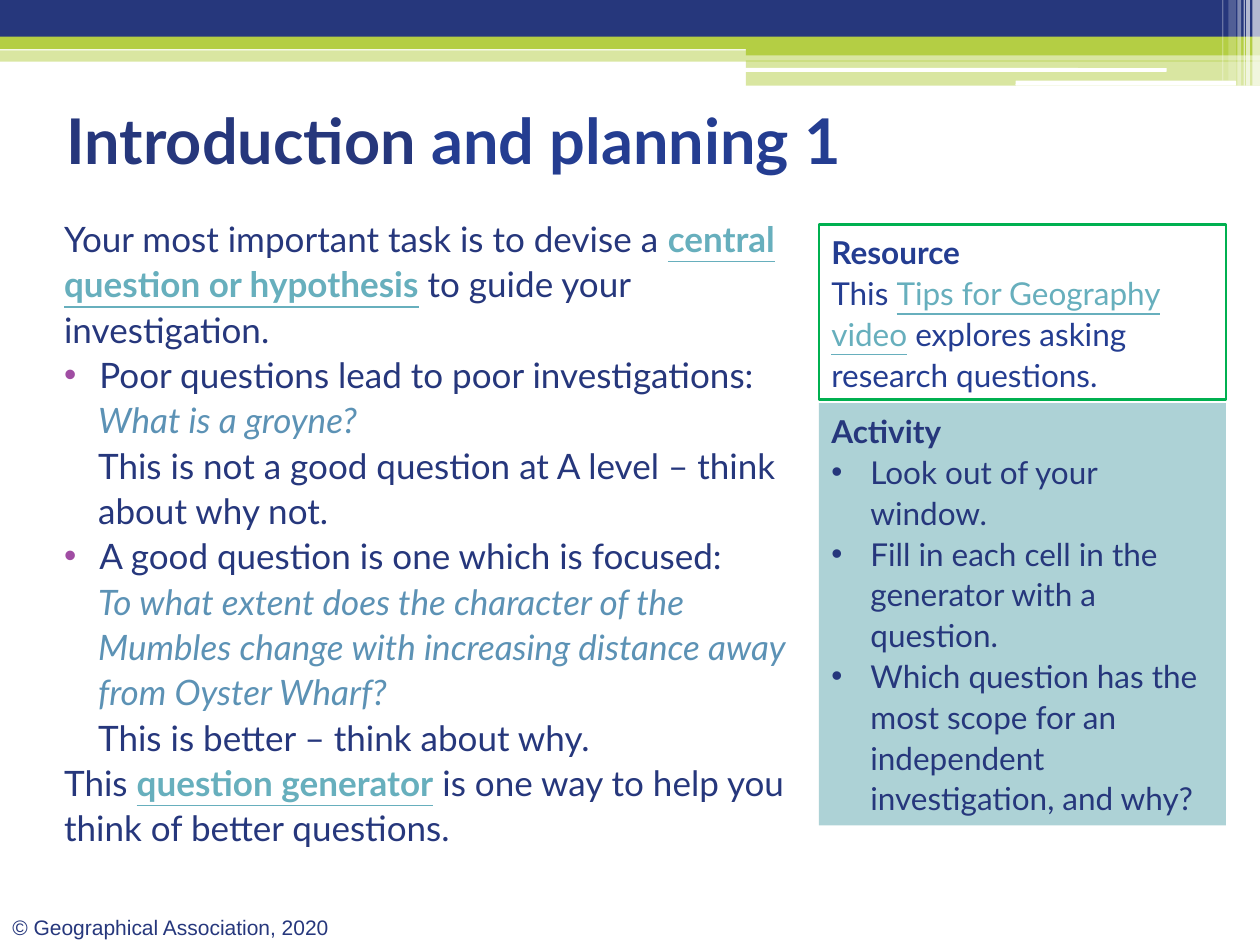
import pptx
import pptx.util
import pptx.dml.color
import pptx.enum.shapes
import pptx.enum.text
import pptx.oxml.ns
import lxml.etree

RGB = pptx.dml.color.RGBColor
KIND = pptx.enum.shapes.MSO_SHAPE
ANCHOR = pptx.enum.text.MSO_ANCHOR
NAVY = RGB(0x26, 0x37, 0x7C)
BLUE = RGB(0x24, 0x3D, 0x91)
LIME = RGB(0xB4, 0xCE, 0x44)
WHITE = RGB(0xFF, 0xFF, 0xFF)
TEAL = RGB(0x67, 0xAF, 0xBD)
STEEL = RGB(0x5C, 0x92, 0xB5)
PURPLE = RGB(0xA0, 0x4D, 0xA3)
PALE = RGB(0xAD, 0xD2, 0xD6)
GREEN = RGB(0x00, 0xB0, 0x50)

WIDE, HIGH = pptx.util.Inches(10), pptx.util.Inches(7.5)

BANDS = [
    ((0, 5.33, 100, 1.2), LIME, 50),
    ((0, 0, 100, 4.53), NAVY, 100),
    ((0, 3.87, 100, 1.33), LIME, 100),
    ((59.2, 4.53, 40.8, 1.33), LIME, 100),
    ((59.2, 6.4, 40.8, 2.67), LIME, 50),
]
PILLS = [(59.1, 7.2, 33.5, 0.4), (80.6, 8.53, 17.5, 0.53)]
STRIPES = [
    (99.4, 0.6, 9.07, 65),
    (98.9, 0.3, 9.07, 65),
    (98.7, 0.1, 9.07, 60),
    (98.2, 0.3, 9.07, 40),
    (97.5, 0.6, 8.53, 20),
    (97, 0.1, 8.53, 30),
]

LINK = dict(color=TEAL, underline=True)
KEY = dict(LINK, bold=True)
ASK = dict(color=STEEL, italic=True)
BOLD = dict(bold=True)
BREAK = ("\n", {})

PLAIN = dict(left=0.12)
POINT = dict(left=0.4, hang=0.28, dot=True, tint=PURPLE)
UNDER = dict(left=0.39)
ITEM = dict(left=0.31, hang=0.31, dot=True)

FOOT = [({}, [("© Geographical Association, 2020", {})])]
TITLE = [({}, [("Introduction", {}), (" and planning 1", dict(color=BLUE))])]
BODY = [
    (PLAIN, [("Your most important task is to devise a ", {}),
             ("central question or hypothesis", KEY),
             (" to guide your investigation.", {})]),
    (POINT, [("Poor questions lead to poor investigations:", {})]),
    (UNDER, [("What is a groyne?", ASK), BREAK,
             ("This is not a good question at A level – think about why not.", {})]),
    (POINT, [("A good question is one which is focused:", {})]),
    (UNDER, [("To what extent does the character of the Mumbles change with "
              "increasing distance away from Oyster Wharf?", ASK), BREAK,
             ("This is better – think about why.", {})]),
    (PLAIN, [("This ", {}), ("question generator", KEY),
             (" is one way to help you think of better questions.", {})]),
]
TASK = [({}, [("Activity", BOLD)])] + [(ITEM, [(line, {})]) for line in (
    "Look out of your window.",
    "Fill in each cell in the generator with a question.",
    "Which question has the most scope for an independent investigation, and why?",
)]
SOURCE = [
    ({}, [("Resource", BOLD)]),
    ({}, [("This ", {}), ("Tips for Geography video", LINK),
          (" explores asking research questions.", {})]),
]


def place(area):
    left, top, width, height = area
    return [int(WIDE * left / 100), int(HIGH * top / 100),
            int(WIDE * width / 100), int(HIGH * height / 100)]


def block(slide, area, fill=None, share=100, kind=KIND.RECTANGLE, edge=None):
    shape = slide.shapes.add_shape(kind, *place(area))
    shape.shadow.inherit = False
    if fill is None:
        shape.fill.background()
    else:
        shape.fill.solid()
        shape.fill.fore_color.rgb = fill
    if share < 100:
        tone = shape.fill._xPr.find(".//" + pptx.oxml.ns.qn("a:srgbClr"))
        lxml.etree.SubElement(tone, pptx.oxml.ns.qn("a:alpha"), val=str(share * 1000))
    if edge is None:
        shape.line.fill.background()
    else:
        shape.line.color.rgb = edge
        shape.line.width = pptx.util.Pt(1.5)
    return shape


def bullet(para, tint):
    props = para._p.get_or_add_pPr()
    if tint is not None:
        tone = lxml.etree.SubElement(props, pptx.oxml.ns.qn("a:buClr"))
        lxml.etree.SubElement(tone, pptx.oxml.ns.qn("a:srgbClr"), val=str(tint))
    lxml.etree.SubElement(props, pptx.oxml.ns.qn("a:buFont"), typeface="Arial")
    lxml.etree.SubElement(props, pptx.oxml.ns.qn("a:buChar"), char="•")


def indent(para, left=0, hang=0, dot=False, tint=None):
    if dot:
        bullet(para, tint)
    props = para._p.get_or_add_pPr()
    props.set("marL", str(pptx.util.Inches(left)))
    props.set("indent", str(-pptx.util.Inches(hang)))


def write(shape, text, size=18, face="Lato", color=NAVY, bold=False,
          space=1.08, anchor=ANCHOR.TOP):
    frame = shape.text_frame
    frame.word_wrap = True
    frame.vertical_anchor = anchor
    for order, (style, runs) in enumerate(text):
        para = frame.add_paragraph() if order else frame.paragraphs[0]
        indent(para, **style)
        para.alignment = pptx.enum.text.PP_ALIGN.LEFT
        para.line_spacing = space
        for words, look in runs:
            if words == "\n":
                para.add_line_break()
                continue
            run = para.add_run()
            run.text = words
            run.font.size = pptx.util.Pt(size)
            run.font.name = face
            run.font.color.rgb = look.get("color", color)
            run.font.bold = look.get("bold", bold)
            run.font.italic = look.get("italic", False)
            run.font.underline = look.get("underline", False)


def main():
    deck = pptx.Presentation()
    deck.slide_width, deck.slide_height = WIDE, HIGH
    slide = deck.slides.add_slide(deck.slide_layouts[6])
    for area, fill, share in BANDS:
        block(slide, area, fill, share)
    for area in PILLS:
        block(slide, area, WHITE, kind=KIND.ROUNDED_RECTANGLE)
    for left, width, height, share in STRIPES:
        block(slide, (left, 0, width, height), WHITE, share)

    def label(area, text, **style):
        write(slide.shapes.add_textbox(*place(area)), text, **style)

    label((0, 96.13, 28.7, 4), FOOT, size=12, face="Arial", space=1)
    label((4.3, 6.93, 90, 15.6), TITLE, size=36, bold=True, space=1,
          anchor=ANCHOR.MIDDLE)
    label((2.9, 22, 62.1, 71.07), BODY, size=20)
    write(block(slide, (65, 42.67, 32.3, 44.67), PALE), TASK)
    write(block(slide, (65, 23.73, 32.3, 18.53), edge=GREEN), SOURCE, color=BLUE)
    deck.save("out.pptx")


if __name__ == "__main__":
    main()
